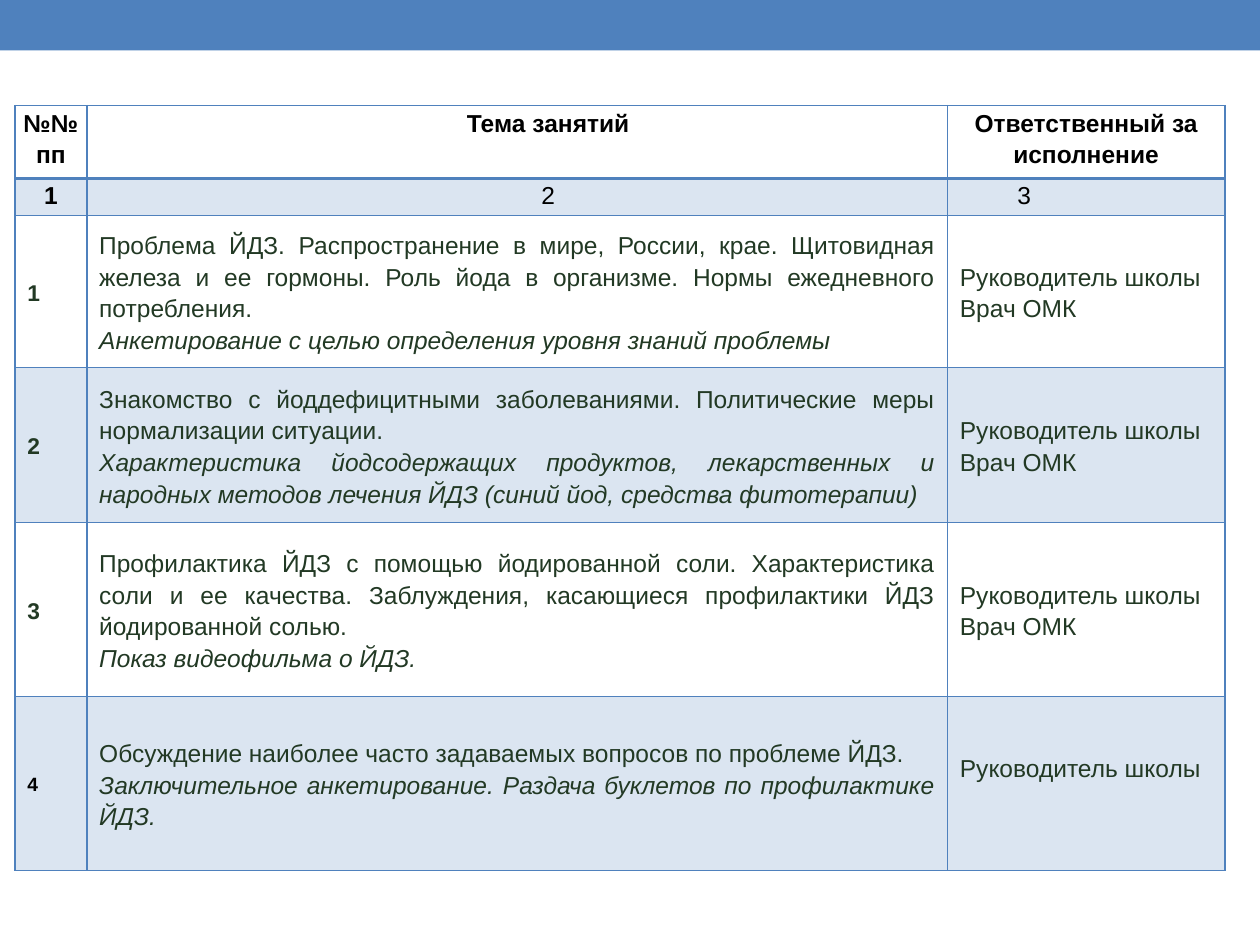
from dataclasses import dataclass

from lxml import etree
from pptx import Presentation
from pptx import util as u
from pptx.dml.color import RGBColor
from pptx.enum import shapes, text
from pptx.oxml import ns


@dataclass(frozen=True)
class Theme:
    """Colours, font and type sizes of the slide."""
    accent: str = "4F81BD"
    ink: str = "000000"
    body: str = "223924"
    font: str = "Arial"
    size: int = 14
    number_size: int = 13
    last_number_size: int = 11
    band_opacity: int = 20


THEME = Theme()
ALIGN = text.PP_ALIGN
COLUMNS = (1.45, 17.35, 5.59)
ROWS = (1.47, 0.74, 3.07, 3.12, 3.51, 3.51)
FIRST_LINE = 1.25
HEADINGS = (("№№", "пп"), ("Тема занятий",), ("Ответственный за исполнение",))
LEADER, DOCTOR = "Руководитель школы", "Врач ОМК"
LESSONS = (
    ("Проблема ЙДЗ. Распространение в мире, России, крае. Щитовидная железа и ее гормоны. "
     "Роль йода в организме. Нормы ежедневного потребления.",
     "Анкетирование с целью определения уровня знаний проблемы", (LEADER, DOCTOR)),
    ("Знакомство с йоддефицитными заболеваниями. Политические меры нормализации ситуации.",
     "Характеристика йодсодержащих продуктов, лекарственных и народных методов лечения ЙДЗ "
     "(синий йод, средства фитотерапии)", (LEADER, DOCTOR)),
    ("Профилактика ЙДЗ с помощью йодированной соли. Характеристика соли и ее качества. "
     "Заблуждения, касающиеся профилактики ЙДЗ йодированной солью.",
     "Показ видеофильма о ЙДЗ.", (LEADER, DOCTOR)),
    ("Обсуждение наиболее часто задаваемых вопросов по проблеме ЙДЗ.",
     "Заключительное анкетирование. Раздача буклетов по профилактике ЙДЗ.", (LEADER,)),
)


def write(frame, lines, size=THEME.size, color=THEME.body, bold=False,
          italic_last=False, align=ALIGN.JUSTIFY, first_line=0):
    """Write one paragraph per line with the given format."""
    for position, line in enumerate(lines):
        paragraph = frame.add_paragraph() if position else frame.paragraphs[0]
        paragraph.alignment = align
        paragraph.line_spacing = 1.15
        if first_line:
            paragraph._p.get_or_add_pPr().set("indent", str(u.Cm(first_line)))
        run = paragraph.add_run()
        run.text = line
        font = run.font
        font.name, font.size, font.bold = THEME.font, u.Pt(size), bold
        font.italic = italic_last and position == len(lines) - 1
        font.color.rgb = RGBColor.from_string(color)


def set_margins(cell, side, edge):
    """Set equal side margins and equal top and bottom margins."""
    cell.margin_left = cell.margin_right = u.Cm(side)
    cell.margin_top = cell.margin_bottom = u.Cm(edge)


def add_borders(cell, top=1, bottom=1):
    """Draw the four borders of a cell in the accent colour."""
    for side, width in (("L", 1), ("R", 1), ("T", top), ("B", bottom)):
        line = etree.SubElement(cell._tc.get_or_add_tcPr(), ns.qn(f"a:ln{side}"),
                                w=str(u.Pt(width)))
        fill = etree.SubElement(line, ns.qn("a:solidFill"))
        etree.SubElement(fill, ns.qn("a:srgbClr"), val=THEME.accent)


def fill_cell(cell, banded):
    """Tint a banded cell and leave any other cell clear."""
    if not banded:
        cell.fill.background()
        return
    cell.fill.solid()
    cell.fill.fore_color.rgb = RGBColor.from_string(THEME.accent)
    tint = cell._tc.tcPr.find(ns.qn("a:solidFill")).find(ns.qn("a:srgbClr"))
    etree.SubElement(tint, ns.qn("a:alpha"), val=str(THEME.band_opacity * 1000))


def add_bar(slide, width):
    """Add the coloured bar along the top edge."""
    bar = slide.shapes.add_shape(shapes.MSO_SHAPE.RECTANGLE, 0, 0, width, u.Cm(1.02))
    bar.shadow.inherit = False
    bar.fill.solid()
    bar.fill.fore_color.rgb = RGBColor.from_string(THEME.accent)
    bar.line.fill.background()


def add_plan(slide):
    """Add the empty table with its grid and banding."""
    plan = slide.shapes.add_table(len(ROWS), len(COLUMNS), u.Cm(0.3), u.Cm(2.13),
                                  u.Cm(sum(COLUMNS)), u.Cm(sum(ROWS))).table
    plan.first_row = plan.horz_banding = False
    for column, width in zip(plan.columns, COLUMNS):
        column.width = u.Cm(width)
    for index, (row, height) in enumerate(zip(plan.rows, ROWS)):
        row.height = u.Cm(height)
        for cell in row.cells:
            add_borders(cell, top=2 if index == 1 else 1, bottom=2 if index == 0 else 1)
            fill_cell(cell, banded=index % 2 == 1)
    return plan


def write_headings(plan):
    """Write the heading row and the row of column numbers."""
    for column, heading in enumerate(HEADINGS):
        title, number = plan.cell(0, column), plan.cell(1, column)
        set_margins(title, 0.16, 0)
        set_margins(number, 0.16, 0)
        middle = FIRST_LINE if column == 1 else 0
        write(title.text_frame, heading, color=THEME.ink, bold=True,
              align=ALIGN.CENTER, first_line=middle)
        write(number.text_frame, [str(column + 1)], color=THEME.ink, bold=column == 0,
              align=ALIGN.LEFT if column == 2 else ALIGN.CENTER,
              first_line=FIRST_LINE if column else 0)


def write_lessons(plan):
    """Write the numbered lessons with their leaders."""
    for number, (topic, activity, leaders) in enumerate(LESSONS, 1):
        cells = [plan.cell(number + 1, column) for column in range(len(COLUMNS))]
        for cell in cells:
            set_margins(cell, 0.25, 0.25)
            cell.vertical_anchor = text.MSO_ANCHOR.MIDDLE
        last = number == len(LESSONS)
        write(cells[0].text_frame, [str(number)], bold=True,
              size=THEME.last_number_size if last else THEME.number_size,
              color=THEME.ink if last else THEME.body)
        write(cells[1].text_frame, [topic, activity], italic_last=True)
        write(cells[2].text_frame, leaders)
        if last:
            cells[2].margin_bottom = u.Cm(0.9)


def main():
    """Build and save the slide."""
    deck = Presentation()
    deck.slide_width, deck.slide_height = u.Cm(25.4), u.Cm(19.05)
    slide = deck.slides.add_slide(deck.slide_layouts[6])
    add_bar(slide, deck.slide_width)
    plan = add_plan(slide)
    write_headings(plan)
    write_lessons(plan)
    deck.save("out.pptx")


if __name__ == "__main__":
    main()
